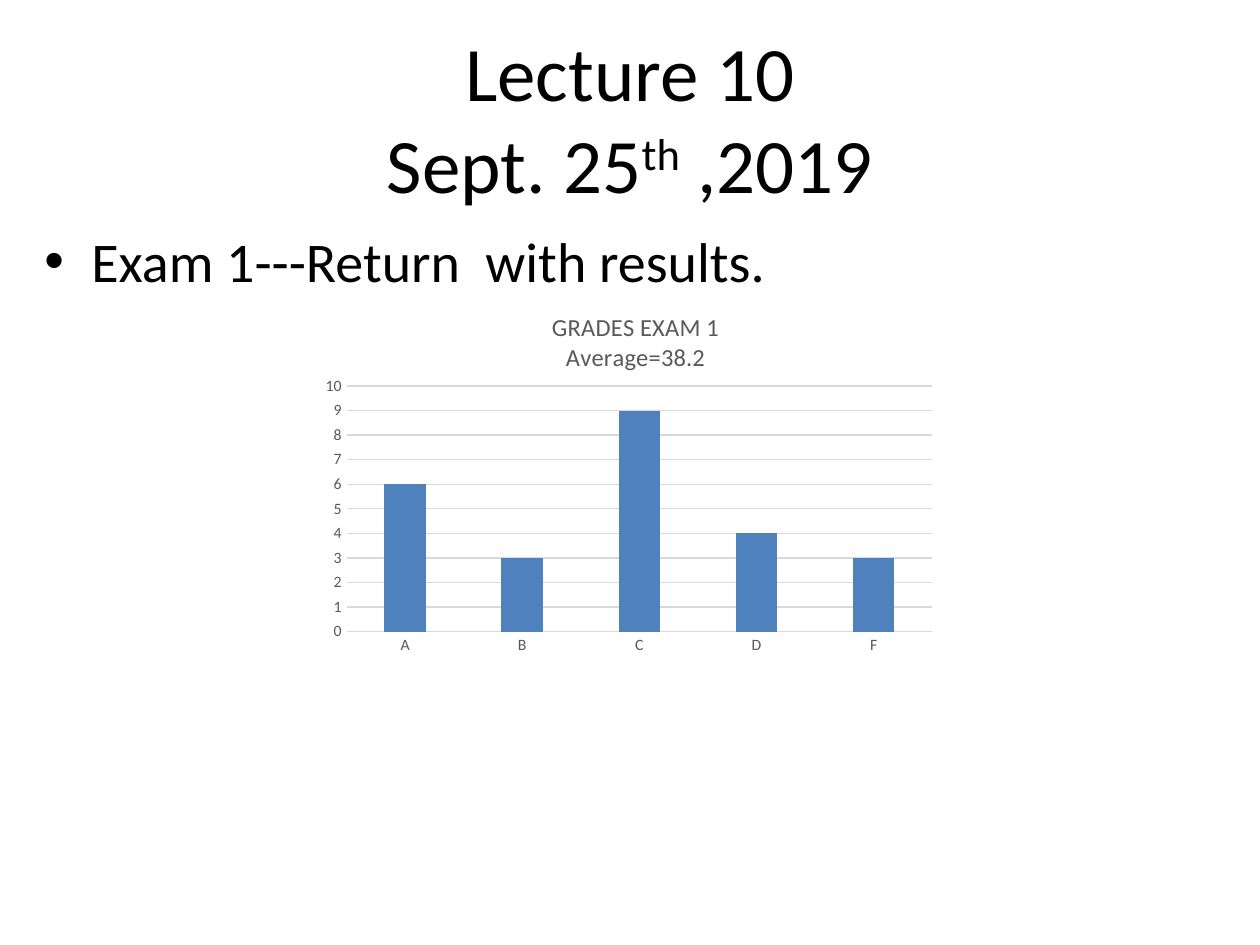
"""Build the Lecture 10 slide with the Exam 1 grade chart."""
import pptx
import pptx.chart.data
import pptx.dml.color
import pptx.enum.chart
import pptx.enum.text
import pptx.oxml
import pptx.oxml.ns
import pptx.util

PX = 914400 // 126
FONT = "Calibri"
COLORS = {"text": "000000", "label": "595959", "grid": "D9D9D9", "bar": "4F81BD"}


def write(para, text, size=32, color="text", baseline=0):
    span = para.add_run()
    span.text = text
    span.font.name = FONT
    span.font.size = pptx.util.Pt(size)
    span.font.bold = False
    span.font.color.rgb = pptx.dml.color.RGBColor.from_string(COLORS[color])
    if baseline:
        span.font._element.set("baseline", str(baseline))


def place(element, **values):
    for old in element.findall(pptx.oxml.ns.qn("c:layout")):
        element.remove(old)
    target = '<c:layoutTarget val="inner"/>' if "w" in values else ""
    modes = '<c:xMode val="edge"/><c:yMode val="edge"/>'
    sizes = "".join(f'<c:{key} val="{value}"/>' for key, value in values.items())
    layout = pptx.oxml.parse_xml(
        f'<c:layout {pptx.oxml.ns.nsdecls("c")}><c:manualLayout>'
        f"{target}{modes}{sizes}</c:manualLayout></c:layout>"
    )
    text = element.find(pptx.oxml.ns.qn("c:tx"))
    element.insert(0 if text is None else 1, layout)


deck = pptx.Presentation()
deck.slide_width = 1260 * PX
deck.slide_height = 945 * PX
page = deck.slides.add_slide(deck.slide_layouts[6])

title_box = page.shapes.add_textbox(63 * PX, 38 * PX, 1134 * PX, 157 * PX)
title_box.text_frame.word_wrap = True
title_box.text_frame.vertical_anchor = pptx.enum.text.MSO_ANCHOR.MIDDLE
para = title_box.text_frame.paragraphs[0]
para.alignment = pptx.enum.text.PP_ALIGN.CENTER
write(para, "Lecture 10", size=44)
para.add_line_break()
write(para, "Sept. 25", size=44)
write(para, "th", size=44, baseline=30000)
write(para, " ,2019", size=44)

body_box = page.shapes.add_textbox(32 * PX, 220 * PX, 1197 * PX, 725 * PX)
body_box.text_frame.word_wrap = True
para = body_box.text_frame.paragraphs[0]
para.space_before = pptx.util.Pt(6.4)
write(para, "Exam 1---Return  with results.")
settings = para._p.get_or_add_pPr()
settings.set("marL", str(47 * PX))
settings.set("indent", str(-47 * PX))
namespace = pptx.oxml.ns.nsdecls("a")
settings.append(pptx.oxml.parse_xml(f'<a:buFont {namespace} typeface="Arial"/>'))
settings.append(pptx.oxml.parse_xml(f'<a:buChar {namespace} char="•"/>'))

grades = pptx.chart.data.CategoryChartData()
grades.categories = ["A", "B", "C", "D", "F"]
grades.add_series("Series 1", [6, 3, 9, 4, 3])
chart = page.shapes.add_chart(
    pptx.enum.chart.XL_CHART_TYPE.COLUMN_CLUSTERED,
    315 * PX, 284 * PX, 630 * PX, 378 * PX, grades,
).chart
chart.has_legend = False
chart.font.name = FONT
chart.font.size = pptx.util.Pt(10)

chart.has_title = True
heading = chart.chart_title.text_frame
write(heading.paragraphs[0], "GRADES EXAM 1", size=14, color="label")
write(heading.add_paragraph(), "Average=38.2", size=14, color="label")
place(chart.chart_title._element, x=0.37, y=0.06)
place(chart._chartSpace.chart.plotArea, x=0.05, y=0.27, w=0.93, h=0.65)

plot = chart.plots[0]
plot.vary_by_categories = False
plot.gap_width = 182
bars = plot.series[0].format.fill
bars.solid()
bars.fore_color.rgb = pptx.dml.color.RGBColor.from_string(COLORS["bar"])

for axis in (chart.category_axis, chart.value_axis):
    axis.major_tick_mark = pptx.enum.chart.XL_TICK_MARK.NONE
    axis.minor_tick_mark = pptx.enum.chart.XL_TICK_MARK.NONE
    labels = axis.tick_labels.font
    labels.name = FONT
    labels.size = pptx.util.Pt(9)
    labels.color.rgb = pptx.dml.color.RGBColor.from_string(COLORS["label"])

chart.value_axis.minimum_scale = 0
chart.value_axis.maximum_scale = 10
chart.value_axis.major_unit = 1
chart.value_axis.has_major_gridlines = True
chart.value_axis.format.line.fill.background()
for line in (chart.category_axis.format.line, chart.value_axis.major_gridlines.format.line):
    line.width = pptx.util.Pt(0.75)
    line.color.rgb = pptx.dml.color.RGBColor.from_string(COLORS["grid"])

deck.save("out.pptx")
